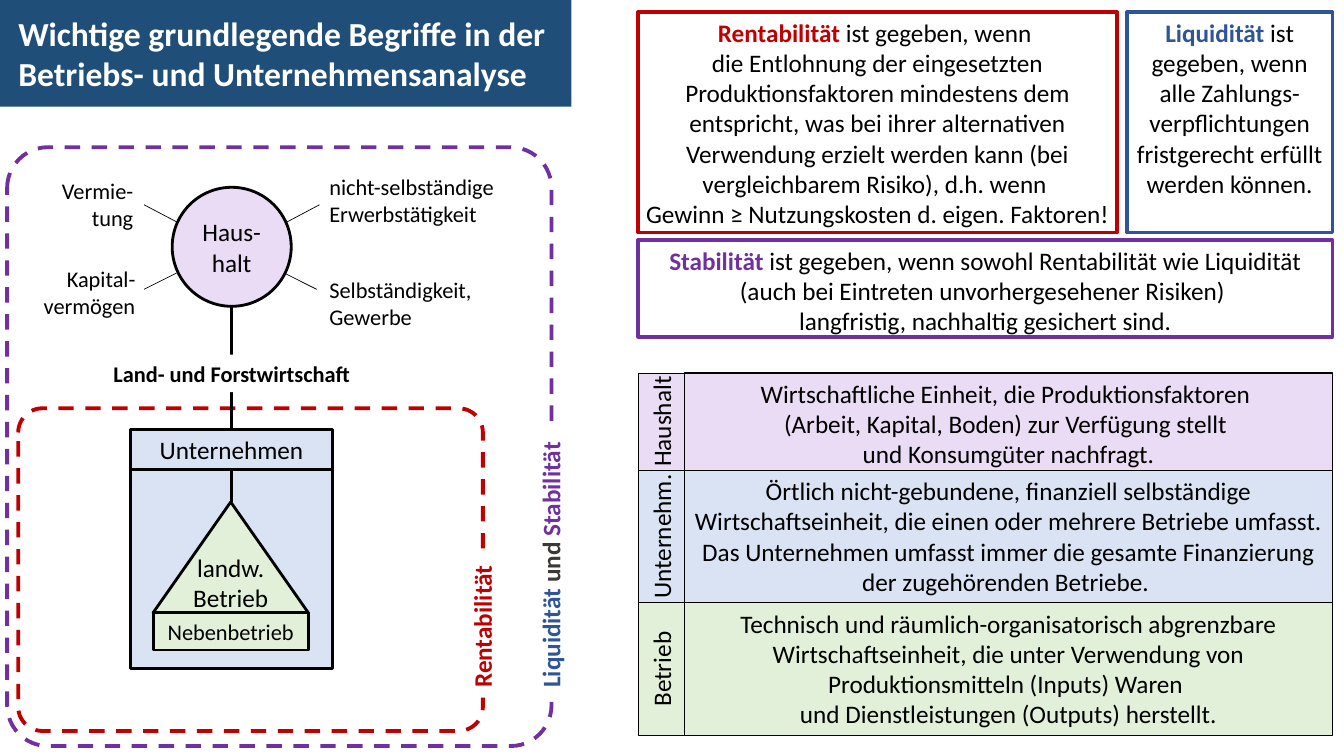
from dataclasses import dataclass

from lxml import etree
from pptx import Presentation
from pptx import util as u
from pptx.dml.color import RGBColor
from pptx.enum import dml, shapes, text
from pptx.oxml.ns import qn


@dataclass(frozen=True)
class Theme:
    font: str = "Calibri"
    black: str = "000000"
    white: str = "FFFFFF"
    grey: str = "3B3838"
    navy: str = "1F4E79"
    red: str = "C00000"
    blue: str = "2F5597"
    purple: str = "7030A0"
    lilac: str = "EADCF4"
    sky: str = "DAE3F3"
    green: str = "E2F0D9"
    title: int = 24
    body: int = 18
    small: int = 16


THEME = Theme()
KIND = shapes.MSO_SHAPE
LEFT, CENTER, RIGHT = text.PP_ALIGN.LEFT, text.PP_ALIGN.CENTER, text.PP_ALIGN.RIGHT
TOP, MIDDLE, BOTTOM = text.MSO_ANCHOR.TOP, text.MSO_ANCHOR.MIDDLE, text.MSO_ANCHOR.BOTTOM
DEFAULT_INSETS = (0.25, 0.13, 0.25, 0.13)

# All positions are in centimetres: (left, top, width, height)
TITLE = ["Wichtige grundlegende Begriffe in der", "Betriebs- und Unternehmensanalyse"]
TITLE_BOX = (0, 0, 14.4, 2.69)

# Box, colour, term, explanation, side inset
CRITERIA = [
    ((16.08, 0.3, 12.07, 5.56), THEME.red, "Rentabilität",
     " ist gegeben, wenn \ndie Entlohnung der eingesetzten Produktionsfaktoren mindestens dem "
     "entspricht, was bei ihrer alternativen Verwendung erzielt werden kann (bei vergleichbarem "
     "Risiko), d.h. wenn \nGewinn ≥ Nutzungskosten d. eigen. Faktoren!", 0.1),
    ((28.4, 0.3, 5.18, 5.56), THEME.blue, "Liquidität",
     " ist gegeben, wenn alle Zahlungs-verpflichtungen fristgerecht erfüllt werden können.", 0.25),
    ((16.08, 6.05, 17.5, 2.44), THEME.purple, "Stabilität",
     " ist gegeben, wenn sowohl Rentabilität wie Liquidität (auch bei Eintreten "
     "unvorhergesehener Risiken) \nlangfristig, nachhaltig gesichert sind.", 0.25),
]

# Term, explanation, fill, height
DEFINITIONS = [
    ("Haushalt", "Wirtschaftliche Einheit, die Produktionsfaktoren \n(Arbeit, Kapital, Boden) "
     "zur Verfügung stellt \nund Konsumgüter nachfragt.", THEME.lilac, 2.45),
    ("Unternehm.", "Örtlich nicht-gebundene, finanziell selbständige Wirtschaftseinheit, die "
     "einen oder mehrere Betriebe umfasst. Das Unternehmen umfasst immer die gesamte "
     "Finanzierung der zugehörenden Betriebe. ", THEME.sky, 3.34),
    ("Betrieb", "Technisch und räumlich-organisatorisch abgrenzbare Wirtschaftseinheit, die unter "
     "Verwendung von Produktionsmitteln (Inputs) Waren \nund Dienstleistungen (Outputs) "
     "herstellt.", THEME.green, 3.34),
]
DEFINITIONS_LEFT, DEFINITIONS_TOP = 16.08, 9.4
TERM_WIDTH, EXPLANATION_WIDTH = 1.18, 16.31

# Box, alignment, paragraphs
INCOME_SOURCES = [
    ((8.05, 4.24, 5, 1.63), LEFT, ["nicht-selbständige Erwerbstätigkeit"]),
    ((8.05, 6.83, 4.29, 1.63), LEFT, ["Selbständigkeit,", "Gewerbe"]),
    ((0.56, 4.34, 3.05, 1.63), RIGHT, ["Vermie-tung"]),
    ((0.76, 6.55, 2.9, 1.63), RIGHT, ["Kapital-vermögen"]),
]
RAYS = [(7.16, 6.88, 7.98, 7.29), (7.24, 5.59, 8.05, 5.16),
        (4.45, 6.88, 3.63, 7.29), (4.45, 5.59, 3.63, 5.16)]
AXIS = 5.83
STEMS = [(AXIS, 7.72, AXIS, 10.82), (AXIS, 11.86, AXIS, 12.65)]
PROFITABILITY_FRAME = (0.46, 10.29, 11.71, 8.13)
STABILITY_FRAME = (0.18, 3.71, 13.72, 15.09)


def rgb(colour):
    return RGBColor.from_string(colour)


def write(frame, paragraphs, size=THEME.body, align=CENTER, anchor=TOP, insets=DEFAULT_INSETS):
    """Fill a text frame; each paragraph is a list of (text, colour, bold) runs."""
    frame.word_wrap = True
    frame.auto_size = text.MSO_AUTO_SIZE.NONE
    frame.vertical_anchor = anchor
    (frame.margin_left, frame.margin_top,
     frame.margin_right, frame.margin_bottom) = map(u.Cm, insets)
    for index, runs in enumerate(paragraphs):
        paragraph = frame.add_paragraph() if index else frame.paragraphs[0]
        paragraph.alignment = align
        for content, colour, bold in runs:
            for number, line in enumerate(content.split("\n")):
                if number:
                    paragraph.add_line_break()
                run = paragraph.add_run()
                run.text = line
                run.font.name, run.font.size = THEME.font, u.Pt(size)
                run.font.bold, run.font.color.rgb = bold, rgb(colour)


def plain(content, bold=False):
    return [[(content, THEME.black, bold)]]


def add_box(slide, box, paragraphs=(), kind=KIND.RECTANGLE, fill=None, line=None,
            width=2, upright=False, **style):
    """Add a shape; with upright, box is the place it takes after turning by 270 degrees."""
    left, top, across, down = box
    if upright:
        left, top = left + (across - down) / 2, top + (down - across) / 2
        across, down = down, across
    shape = slide.shapes.add_shape(kind, *map(u.Cm, (left, top, across, down)))
    shape.rotation = 270 if upright else 0
    shape.shadow.inherit = False
    if fill:
        shape.fill.solid()
        shape.fill.fore_color.rgb = rgb(fill)
    else:
        shape.fill.background()
    if line:
        shape.line.color.rgb, shape.line.width = rgb(line), u.Pt(width)
    else:
        shape.line.fill.background()
    if paragraphs:
        write(shape.text_frame, paragraphs, **style)
    return shape


def add_frame(slide, box, colour):
    frame = add_box(slide, box, kind=KIND.ROUNDED_RECTANGLE, line=colour, width=2.75)
    frame.adjustments[0] = 0.075
    frame.line.dash_style = dml.MSO_LINE.DASH


def add_line(slide, ends, width):
    line = slide.shapes.add_connector(shapes.MSO_CONNECTOR.STRAIGHT, *map(u.Cm, ends))
    line.line.color.rgb, line.line.width = rgb(THEME.black), u.Pt(width)
    etree.SubElement(line.element.spPr, qn("a:effectLst"))


def add_title(slide):
    title = slide.shapes.title
    title.left, title.top, title.width, title.height = map(u.Cm, TITLE_BOX)
    title.fill.solid()
    title.fill.fore_color.rgb = rgb(THEME.navy)
    write(title.text_frame, [[(line, THEME.white, True)] for line in TITLE],
          size=THEME.title, align=LEFT, anchor=MIDDLE, insets=(0.46, 0.13, 0, 0.13))


def add_diagram(slide):
    add_frame(slide, PROFITABILITY_FRAME, THEME.red)
    add_box(slide, (4.34, 4.72, 3, 3), plain("Haus-halt"), KIND.OVAL,
            THEME.lilac, THEME.black, anchor=MIDDLE)
    add_box(slide, (3.28, 10.82, 5.11, 1.02), plain("Unternehmen"),
            fill=THEME.sky, line=THEME.black)
    add_box(slide, (3.28, 11.84, 5.11, 5), fill=THEME.sky, line=THEME.black)
    add_box(slide, (3.86, 12.65, 3.91, 2.79), plain("landw.\nBetrieb"), KIND.ISOSCELES_TRIANGLE,
            THEME.green, THEME.black, anchor=BOTTOM, insets=(0, 0, 0, 0))
    add_box(slide, (3.86, 15.44, 3.91, 0.94), plain("Nebenbetrieb"),
            fill=THEME.green, line=THEME.black, size=THEME.small)
    for ends in STEMS:
        add_line(slide, ends, 2)
    for ends in RAYS:
        add_line(slide, ends, 0.5)
    for box, align, lines in INCOME_SOURCES:
        add_box(slide, box, [[(line, THEME.black, False)] for line in lines],
                size=THEME.small, align=align)
    add_box(slide, (1.98, 8.94, 7.72, 0.94), plain("Land- und Forstwirtschaft", True),
            fill=THEME.white, size=THEME.small)
    add_box(slide, (11.63, 13.97, 1.02, 3.61), [[("Rentabilität", THEME.red, True)]],
            fill=THEME.white, upright=True, align=LEFT)
    add_frame(slide, STABILITY_FRAME, THEME.purple)
    add_box(slide, (13.36, 10.82, 1.02, 6.76),
            [[("Liquidität ", THEME.blue, True), ("und", THEME.grey, True),
              (" Stabilität", THEME.purple, True)]],
            fill=THEME.white, upright=True, align=LEFT)


def add_criteria(slide):
    for box, colour, term, explanation, side in CRITERIA:
        add_box(slide, box, [[(term, colour, True), (explanation, THEME.black, False)]],
                line=colour, width=2.5, insets=(side, 0.13, side, 0.13))


def add_definitions(slide):
    top = DEFINITIONS_TOP
    for term, explanation, fill, height in DEFINITIONS:
        add_box(slide, (DEFINITIONS_LEFT, top, TERM_WIDTH, height), plain(term), fill=fill,
                line=THEME.black, width=0.75, upright=True, insets=(0, 0.2, 0, 0.2))
        add_box(slide, (DEFINITIONS_LEFT + TERM_WIDTH, top, EXPLANATION_WIDTH, height),
                plain(explanation), fill=fill, line=THEME.black, width=0.75)
        top += height


def main():
    presentation = Presentation()
    presentation.slide_width, presentation.slide_height = u.Cm(33.87), u.Cm(19.05)
    slide = presentation.slides.add_slide(presentation.slide_layouts.get_by_name("Title Only"))
    add_title(slide)
    add_diagram(slide)
    add_definitions(slide)
    add_criteria(slide)
    presentation.save("out.pptx")


if __name__ == "__main__":
    main()
